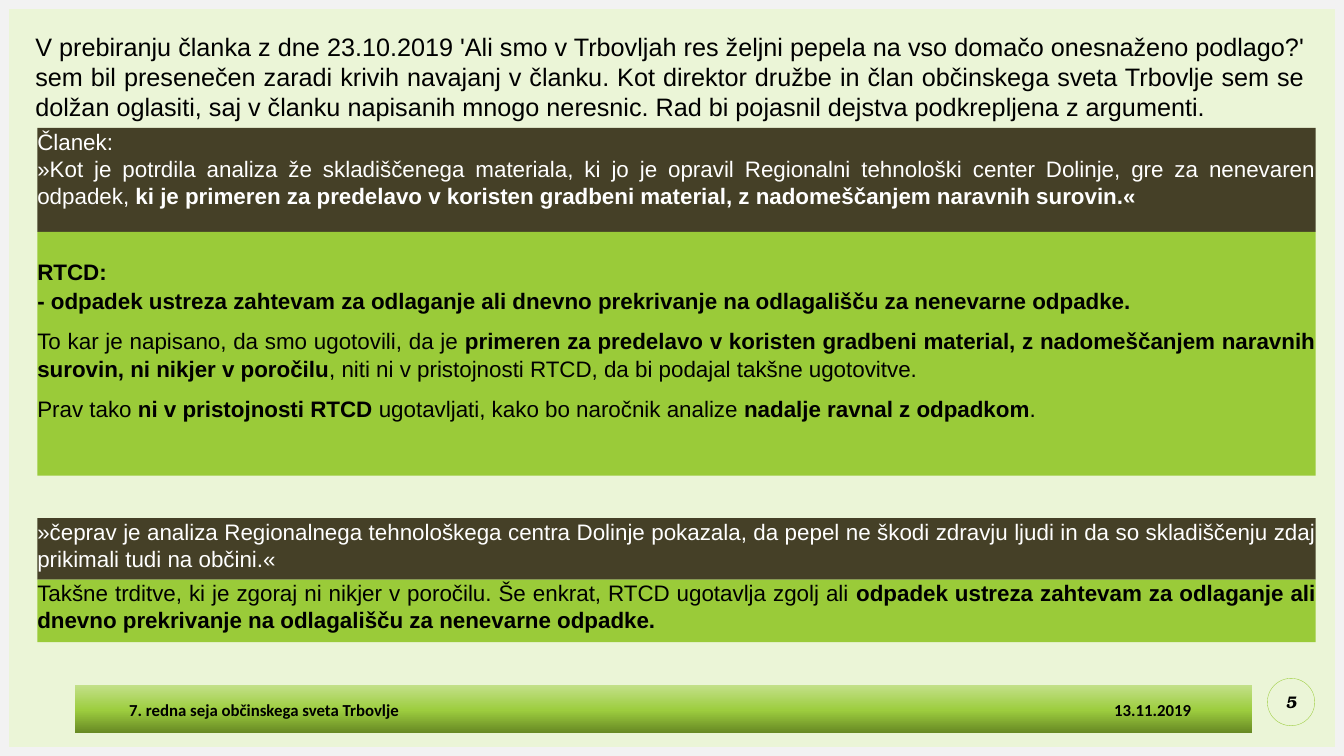
"""Build the council session slide that sets article quotes against replies."""
from copy import deepcopy

from lxml.etree import SubElement
from pptx import Presentation
from pptx.dml.color import RGBColor
from pptx.enum.shapes import MSO_SHAPE
from pptx.enum.text import MSO_ANCHOR, MSO_AUTO_SIZE, PP_ALIGN
from pptx.oxml.ns import qn
from pptx.util import Inches, Pt

COLORS = {
    "frame": "F2F2F2", "panel": "EBF5D7", "quote": "454027", "reply": "9ACB39",
    "white": "FFFFFF", "black": "000000",
    "dark": "688A24", "mid": "9DCD3F", "light": "C2E088",
}


def add_box(shape_type, x, y, w, h, fill=None):
    sp = slide.shapes.add_shape(shape_type, Inches(x), Inches(y), Inches(w), Inches(h))
    sp.shadow.inherit = False
    sp.line.fill.background()
    if fill:
        sp.fill.solid()
        sp.fill.fore_color.rgb = RGBColor.from_string(COLORS[fill])
    else:
        sp.fill.background()
    tf = sp.text_frame
    tf.word_wrap = True
    tf.vertical_anchor = MSO_ANCHOR.TOP
    tf.margin_left = tf.margin_top = tf.margin_right = tf.margin_bottom = 0
    return sp


def add_run(p, text, size, color="black", bold=False, name="Arial"):
    r = p.add_run()
    r.text = text
    r.font.size = Pt(size)
    r.font.name = name
    r.font.bold = bold
    r.font.color.rgb = RGBColor.from_string(COLORS[color])
    return r


prs = Presentation()
prs.slide_width = Inches(13.33)
prs.slide_height = Inches(7.5)
slide = prs.slides.add_slide(prs.slide_layouts[5])

EDGE = 0.09
for x, y, w, h in [
    (0, 7.5 - EDGE, 13.33, EDGE),
    (0, 0, 13.33, EDGE),
    (0, 0, EDGE, 7.5),
    (13.33 - EDGE, 0, EDGE, 7.5),
]:
    add_box(MSO_SHAPE.RECTANGLE, x, y, w, h, "frame")
panel = add_box(MSO_SHAPE.RECTANGLE, EDGE, EDGE, 13.33 - 2 * EDGE, 7.5 - 2 * EDGE, "panel")

title = slide.shapes.title
panel._element.addnext(title._element)
title.left, title.top = Inches(0.25), Inches(0.26)
title.width, title.height = Inches(12.79), Inches(1.01)
tf = title.text_frame
tf.word_wrap = True
tf.auto_size = MSO_AUTO_SIZE.NONE
tf.vertical_anchor = MSO_ANCHOR.TOP
p = tf.paragraphs[0]
p.alignment = PP_ALIGN.JUSTIFY
add_run(p, "V prebiranju članka z dne 23.10.2019 'Ali smo v Trbovljah res željni pepela na vso "
        "domačo onesnaženo podlago?' sem bil presenečen zaradi krivih navajanj v članku. Kot "
        "direktor družbe in član občinskega sveta Trbovlje sem se dolžan oglasiti, saj v članku "
        "napisanih mnogo neresnic. Rad bi pojasnil dejstva podkrepljena z argumenti.", 18)

badge = add_box(MSO_SHAPE.OVAL, 12.57, 6.73, 0.47, 0.47)
badge.line.color.rgb = RGBColor.from_string(COLORS["reply"])
badge.line.width = Pt(0.25)
badge.text_frame.vertical_anchor = MSO_ANCHOR.MIDDLE
p = badge.text_frame.paragraphs[0]
p.alignment = PP_ALIGN.CENTER
add_run(p, "5", 12, bold=True, name="TeX Gyre Bonum").font.italic = True

footer = add_box(MSO_SHAPE.RECTANGLE, 0.74, 6.8, 11.68, 0.47)
footer.fill.gradient()
footer.fill.gradient_angle = 90
stops = footer._element.find(".//" + qn("a:gsLst"))
stops.insert(1, deepcopy(stops[0]))
for stop, (position, color) in zip(
    footer.fill.gradient_stops, [(0, "dark"), (0.48, "mid"), (1, "light")]
):
    stop.position = position
    stop.color.rgb = RGBColor.from_string(COLORS[color])
tf = footer.text_frame
tf.margin_left, tf.margin_top = Inches(0.54), Inches(0.16)
p = tf.paragraphs[0]
p.alignment = PP_ALIGN.LEFT
p.line_spacing = 0.9
tabs = SubElement(p._p.get_or_add_pPr(), qn("a:tabLst"))
SubElement(tabs, qn("a:tab"), pos=str(Inches(9.77)), algn="l")
add_run(p, "7. redna seja občinskega sveta Trbovlje\t13.11.2019", 12, bold=True, name="Calibri")

BANDS = [
    (1.27, 1.03, 0, "quote", "white", [
        (False, [("Članek:", False)]),
        (False, [
            ("»Kot je potrdila analiza že skladiščenega materiala, ki jo je opravil Regionalni "
             "tehnološki center Dolinje, gre za nenevaren odpadek, ", False),
            ("ki je primeren za predelavo v koristen gradbeni material, z nadomeščanjem "
             "naravnih surovin.«", True)]),
    ]),
    (2.3, 2.42, 0.26, "reply", "black", [
        (False, [("RTCD:", True)]),
        (True, [("- odpadek ustreza zahtevam za odlaganje ali dnevno prekrivanje na "
                 "odlagališču za nenevarne odpadke.", True)]),
        (True, [
            ("To kar je napisano, da smo ugotovili, da je ", False),
            ("primeren za predelavo v koristen gradbeni material, z nadomeščanjem naravnih "
             "surovin, ni nikjer v poročilu", True),
            (", niti ni v pristojnosti RTCD, da bi podajal takšne ugotovitve.", False)]),
        (True, [
            ("Prav tako ", False),
            ("ni v pristojnosti RTCD ", True),
            ("ugotavljati, kako bo naročnik analize ", False),
            ("nadalje ravnal z odpadkom", True),
            (".", False)]),
    ]),
    (5.14, 0.61, 0, "quote", "white", [
        (False, [("»čeprav je analiza Regionalnega tehnološkega centra Dolinje pokazala, da "
                  "pepel ne škodi zdravju ljudi in da so skladiščenju zdaj prikimali tudi na "
                  "občini.«", False)]),
    ]),
    (5.75, 0.62, 0, "reply", "black", [
        (False, [
            ("Takšne trditve, ki je zgoraj ni nikjer v poročilu. Še enkrat, RTCD ugotavlja "
             "zgolj ali ", False),
            ("odpadek ustreza zahtevam za odlaganje ali dnevno prekrivanje na odlagališču za "
             "nenevarne odpadke.", True)]),
    ]),
]
for top, height, inset, fill, color, paragraphs in BANDS:
    sp = add_box(MSO_SHAPE.RECTANGLE, 0.37, top, 12.68, height, fill)
    tf = sp.text_frame
    tf.margin_top = Inches(inset)
    for i, (spaced, runs) in enumerate(paragraphs):
        p = tf.add_paragraph() if i else tf.paragraphs[0]
        p.alignment = PP_ALIGN.JUSTIFY
        if spaced:
            p.line_spacing = 1.07
            p.space_after = Pt(8)
        for text, bold in runs:
            add_run(p, text, 16, color, bold)

prs.save("out.pptx")
